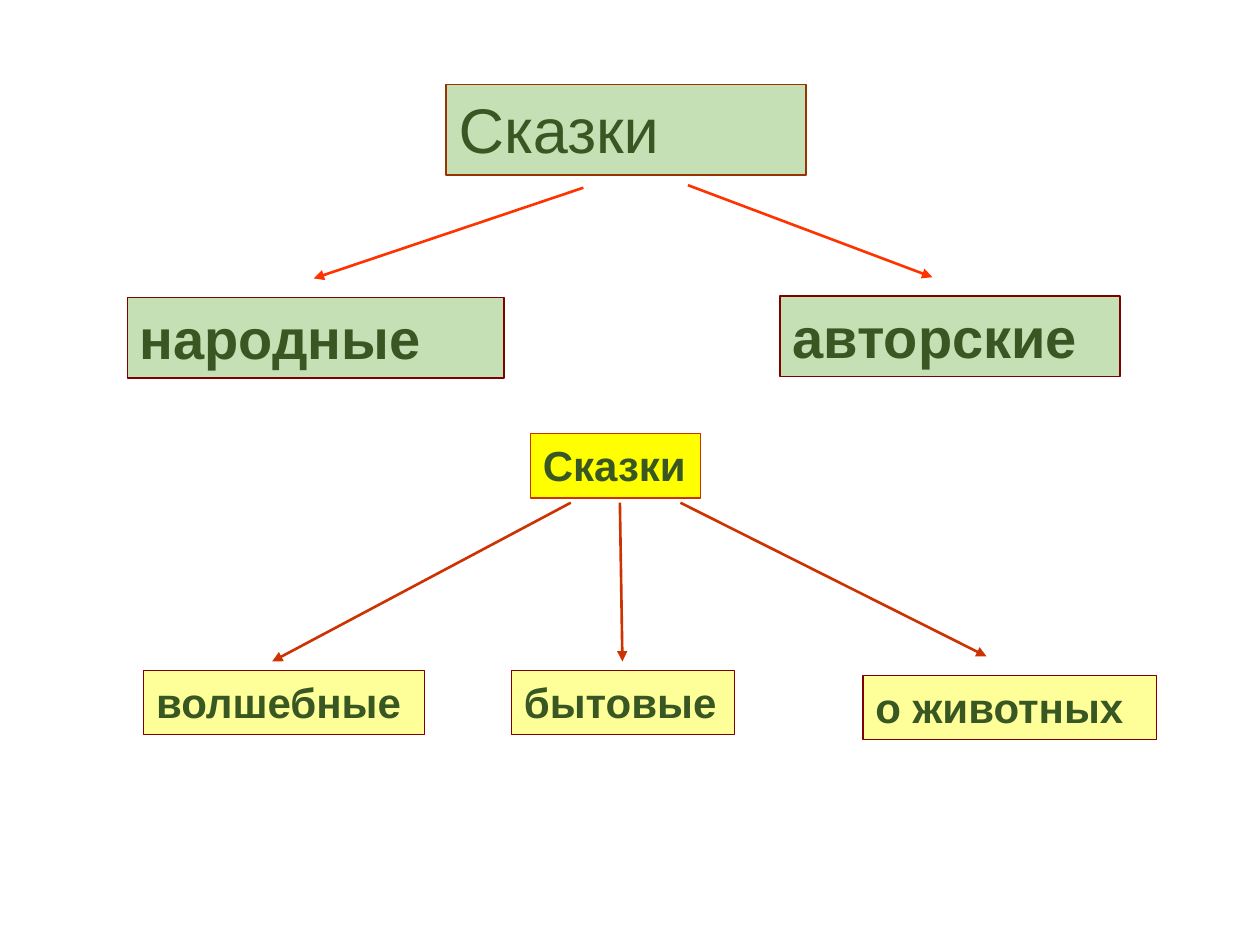
from lxml import etree
from pptx import Presentation
from pptx.dml.color import RGBColor
from pptx.enum.shapes import MSO_CONNECTOR
from pptx.enum.text import MSO_ANCHOR, MSO_AUTO_SIZE, PP_ALIGN
from pptx.oxml.ns import qn
from pptx.util import Emu, Pt

STRAIGHT = MSO_CONNECTOR.STRAIGHT
TOP = MSO_ANCHOR.TOP
FIT_SHAPE = MSO_AUTO_SIZE.SHAPE_TO_FIT_TEXT
FIXED_SIZE = MSO_AUTO_SIZE.NONE
LEFT = PP_ALIGN.LEFT

PX = 9144  # 100 px to the inch
TITLE_ONLY = 5

DARK_GREEN = RGBColor(0x38, 0x57, 0x23)
PALE_GREEN = RGBColor(0xC5, 0xE0, 0xB4)
YELLOW = RGBColor(0xFF, 0xFF, 0x00)
PALE_YELLOW = RGBColor(0xFF, 0xFF, 0x99)
BROWN = RGBColor(0x99, 0x33, 0x00)
MAROON = RGBColor(0x80, 0x00, 0x00)
RED = RGBColor(0xFF, 0x33, 0x00)
BRICK = RGBColor(0xCC, 0x33, 0x00)


def px(value):
    return Emu(value * PX)


def fill_label(label, box, text, size, fill, border, border_width=0.75,
               bold=True, wrap=True, auto_size=FIT_SHAPE):
    """Place a text box or placeholder and give it its text and colours."""
    label.left, label.top, label.width, label.height = map(px, box)
    label.fill.solid()
    label.fill.fore_color.rgb = fill
    label.line.color.rgb = border
    label.line.width = Pt(border_width)
    frame = label.text_frame
    frame.word_wrap = wrap
    frame.auto_size = auto_size
    frame.vertical_anchor = TOP
    frame.text = text
    paragraph = frame.paragraphs[0]
    paragraph.alignment = LEFT
    font = paragraph.font
    font.name = "Arial"
    font.size = Pt(size)
    font.bold = bold
    font.color.rgb = DARK_GREEN


def add_arrow(slide, start, end, color):
    arrow = slide.shapes.add_connector(STRAIGHT, *map(px, (*start, *end)))
    arrow.line.color.rgb = color
    arrow.line.width = Pt(1.5)
    etree.SubElement(arrow.line._get_or_add_ln(), qn("a:tailEnd"), type="triangle")
    etree.SubElement(arrow._element.spPr, qn("a:effectLst"))


def add_branches(slide, origin, branches, size, fill, arrow_color):
    """Add the child labels of a tree and the arrows that lead to them."""
    x, y = origin
    for text, (left, top, width, height), start, end in branches:
        label = slide.shapes.add_textbox(0, 0, 0, 0)
        fill_label(label, (x + left, y + top, width, height), text, size, fill, MAROON)
        add_arrow(slide, (x + start[0], y + start[1]),
                  (x + end[0], y + end[1]), arrow_color)


def add_authorship_tree(slide, x, y):
    # A title placeholder that fits its text is drawn too tall.
    fill_label(slide.shapes.title, (x + 253, y, 286, 72), "Сказки", 36,
               PALE_GREEN, BROWN, border_width=1, bold=False, auto_size=FIXED_SIZE)
    branches = [
        ("народные", (0, 169, 299, 64), (362, 82), (148, 154)),
        ("авторские", (518, 168, 270, 64), (445, 80), (639, 153)),
    ]
    add_branches(slide, (x, y), branches, 32, PALE_GREEN, RED)


def add_genre_tree(slide, x, y):
    root = slide.shapes.add_textbox(0, 0, 0, 0)
    fill_label(root, (x + 307, y, 135, 51), "Сказки", 24,
               YELLOW, BRICK, border_width=1, wrap=False)
    branches = [
        ("волшебные", (0, 188, 223, 51), (339, 55), (102, 181)),
        ("бытовые", (292, 188, 177, 51), (378, 55), (380, 181)),
        ("о животных", (571, 192, 233, 51), (426, 55), (669, 177)),
    ]
    add_branches(slide, (x, y), branches, 24, PALE_YELLOW, BRICK)


def main():
    deck = Presentation()
    deck.slide_width, deck.slide_height = px(1000), px(750)
    slide = deck.slides.add_slide(deck.slide_layouts[TITLE_ONLY])
    add_authorship_tree(slide, 101, 67)
    add_genre_tree(slide, 114, 344)
    deck.save("out.pptx")


if __name__ == "__main__":
    main()
